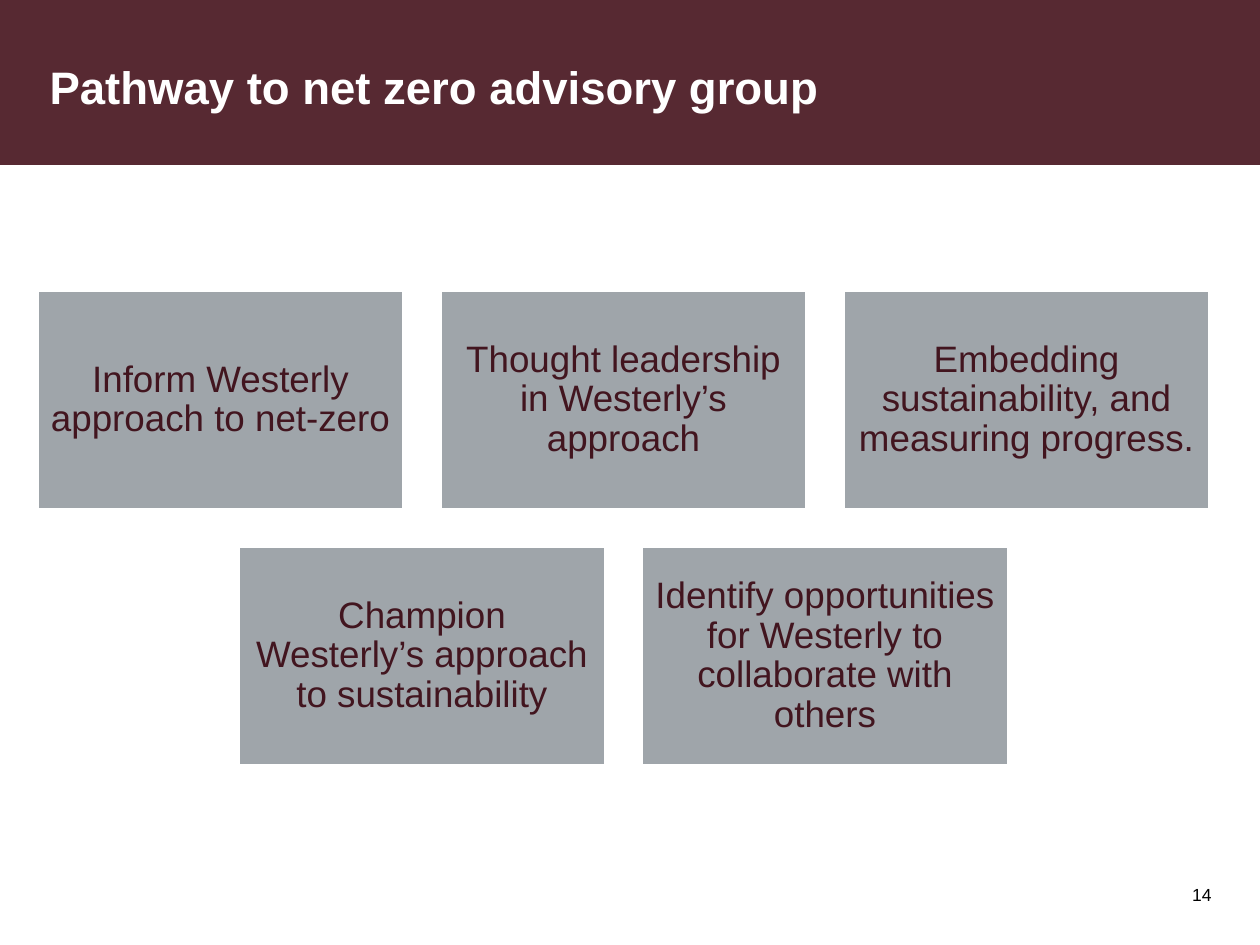
from pptx import Presentation
from pptx.dml.color import RGBColor
from pptx.enum.shapes import MSO_SHAPE
from pptx.enum.text import MSO_ANCHOR, MSO_AUTO_SIZE, PP_ALIGN
from pptx.util import Pt

EMU_PER_PX = 914400 / 126
COLOURS = {"band": "572932", "card": "9FA5AA", "card_text": "42151F",
           "white": "FFFFFF", "black": "000000"}
FONT = "Arial"
CARD_ROWS = [
    ["Inform Westerly approach to net-zero",
     "Thought leadership in Westerly’s approach",
     "Embedding sustainability, and measuring progress."],
    ["Champion Westerly’s approach to sustainability",
     "Identify opportunities for Westerly to collaborate with others"],
]


def px(length):
    return round(length * EMU_PER_PX)


def colour(name):
    return RGBColor.from_string(COLOURS[name])


def write(shape, text, size, font_colour, align, anchor, bold=False, inset=None):
    frame = shape.text_frame
    frame.text = text
    frame_format = {"word_wrap": True, "auto_size": MSO_AUTO_SIZE.NONE,
                    "vertical_anchor": anchor}
    if inset is not None:
        for side in ("left", "top", "right", "bottom"):
            frame_format[f"margin_{side}"] = px(inset)
    for name, value in frame_format.items():
        setattr(frame, name, value)
    paragraph = frame.paragraphs[0]
    paragraph.alignment = align
    for name, value in {"name": FONT, "size": Pt(size), "bold": bold}.items():
        setattr(paragraph.font, name, value)
    paragraph.font.color.rgb = colour(font_colour)
    return paragraph


def add_rectangle(slide, box, fill):
    shape = slide.shapes.add_shape(MSO_SHAPE.RECTANGLE, *map(px, box))
    shape.shadow.inherit = False
    shape.fill.solid()
    shape.fill.fore_color.rgb = colour(fill)
    shape.line.fill.background()
    return shape


def add_header(slide, box, text):
    left, top, width, height = box
    band = add_rectangle(slide, box, "band")
    title = slide.shapes.title
    band._element.addnext(title._element)
    place = {"left": left + 37, "top": top + 30, "width": 916, "height": height - 53}
    for name, value in place.items():
        setattr(title, name, px(value))
    write(title, text, 26, "white", PP_ALIGN.LEFT, MSO_ANCHOR.MIDDLE, bold=True)


def add_card(slide, box, text):
    card = add_rectangle(slide, box, "card")
    card.line.color.rgb = colour("white")
    card.line.width = Pt(2)
    paragraph = write(card, text, 21, "card_text", PP_ALIGN.CENTER,
                      MSO_ANCHOR.MIDDLE, inset=11)
    paragraph.line_spacing = 0.9


def add_cards(slide, box, rows, gap):
    left, top, width, height = box
    columns = max(map(len, rows))
    card_width = (width - gap * (columns - 1)) / columns
    card_height = (height - gap * (len(rows) - 1)) / len(rows)
    for row, texts in enumerate(rows):
        row_width = len(texts) * (card_width + gap) - gap
        row_left = left + (width - row_width) / 2
        for column, text in enumerate(texts):
            add_card(slide, (row_left + column * (card_width + gap),
                             top + row * (card_height + gap),
                             card_width, card_height), text)


def add_page_number(slide, box, number):
    text_box = slide.shapes.add_textbox(*map(px, box))
    write(text_box, str(number), 10, "black", PP_ALIGN.RIGHT, MSO_ANCHOR.TOP)


def main():
    presentation = Presentation()
    presentation.slide_width, presentation.slide_height = px(1260), px(945)
    slide = presentation.slides.add_slide(presentation.slide_layouts[5])
    add_header(slide, (0, 0, 1260, 165), "Pathway to net zero advisory group")
    add_cards(slide, (37, 290, 1173, 476), CARD_ROWS, gap=36)
    add_page_number(slide, (1106, 878, 118, 57), 14)
    presentation.save("out.pptx")


if __name__ == "__main__":
    main()
